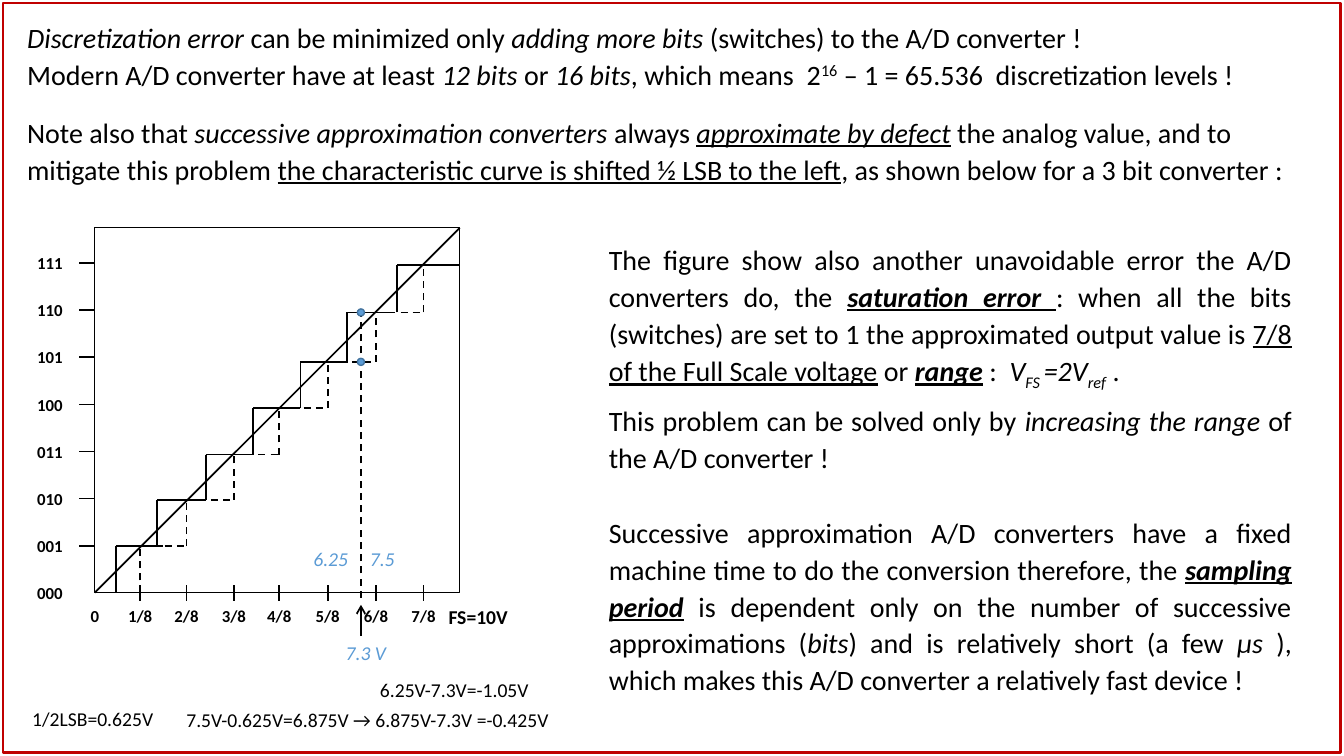
"""Build a slide on A/D converter errors with a shifted 3 bit characteristic."""
from pptx import Presentation
from pptx.dml.color import RGBColor
from pptx.enum.dml import MSO_LINE
from pptx.enum.shapes import MSO_CONNECTOR, MSO_SHAPE
from pptx.enum.text import MSO_ANCHOR, PP_ALIGN
from pptx.oxml.ns import qn
from pptx.util import Inches, Pt
from lxml import etree

DASH = MSO_LINE.DASH
STRAIGHT = MSO_CONNECTOR.STRAIGHT
RECTANGLE, OVAL = MSO_SHAPE.RECTANGLE, MSO_SHAPE.OVAL
LEFT, CENTER, JUSTIFY = PP_ALIGN.LEFT, PP_ALIGN.CENTER, PP_ALIGN.JUSTIFY
TOP, MIDDLE = MSO_ANCHOR.TOP, MSO_ANCHOR.MIDDLE

FONT = "Calibri"
BLACK, RED, BLUE, DARK_BLUE = "000000", "C00000", "5B9BD5", "43739E"
BASELINES = {"^": "30000", "_": "-25000"}

# Each paragraph: space before, space after, runs of (text, style letters)
INTRO = [
    (0, 0, [("Discretization error", "i"), (" can be minimized only ", ""),
            ("adding more bits ", "i"), ("(switches) to the A/D converter !", "")]),
    (0, 0, [("Modern A/D converter have at least ", ""), ("12 bits", "i"), (" or ", ""),
            ("16 bits", "i"), (", which means  2", ""), ("16", "^"),
            (" – 1 = 65.536  discretization levels !", "")]),
    (15, 0, [("Note also that ", ""), ("successive approximation converters", "i"),
             (" always ", ""), ("approximate by defect", "iu"),
             (" the analog value, and to mitigate this problem ", ""),
             ("the characteristic curve is shifted ½ LSB to the left", "u"),
             (", as shown below for a 3 bit converter :", "")]),
]
EXPLANATION = [
    (0, 6, [("The figure show also another unavoidable error the A/D converters do, the ", ""),
            ("saturation error ", "biu"),
            (": when all the bits (switches) are set to 1 the approximated output value is ", ""),
            ("7/8 of the Full Scale voltage", "u"), (" or ", ""), ("range", "biu"),
            (" :  ", ""), ("V", "i"), ("FS ", "i_"), ("=2V", "i"), ("ref", "i_"), (" .", "")]),
    (0, 0, [("This problem can be solved only by ", ""), ("increasing the range ", "i"),
            ("of the A/D converter !", "")]),
    (27, 0, [("Successive approximation A/D converters have a fixed machine time to do the "
              "conversion therefore, the ", ""), ("sampling period", "biu"),
             (" is dependent only on the number of successive approximations (", ""),
             ("bits", "i"), (") and is relatively short (a few ", ""), ("μs ", "i"),
             ("), which makes this A/D converter a relatively fast device !", "")]),
]

# Each note: text, left, top, width, colour, style letters
NOTES = [
    ("1/2LSB=0.625V", 0.22, 6.96, 1.42, BLACK, ""),
    ("7.5V-0.625V=6.875V → 6.875V-7.3V =-0.425V", 1.75, 6.97, 3.87, BLACK, ""),
    ("6.25V-7.3V=-1.05V", 3.67, 6.68, 1.79, BLACK, ""),
    ("6.25", 3.01, 5.38, 0.6, BLUE, "i"),
    ("7.5", 3.57, 5.38, 0.5, BLUE, "i"),
    ("7.3 V", 3.33, 6.31, 0.61, BLUE, "i"),
    ("FS=10V", 4.35, 5.95, 0.79, BLACK, "b"),
]

PLOT_LEFT, PLOT_TOP, PLOT_SIZE = 0.94, 2.26, 3.62
PLOT_RIGHT, PLOT_BOTTOM = PLOT_LEFT + PLOT_SIZE, PLOT_TOP + PLOT_SIZE
LEVELS = [5.42, 4.96, 4.51, 4.05, 3.59, 3.1, 2.63]
SHIFTED_STEPS = [1.15, 1.56, 2.04, 2.51, 2.98, 3.44, 3.94]
IDEAL_STEPS = [1.39, 1.85, 2.32, 2.77, 3.25, 3.73, 4.2]
TREAD, CODE_PITCH = 0.47, 0.467
INPUT_X, DOT = 3.58, 0.07


def color(value):
    return RGBColor.from_string(value)


def add_text(slide, box, paragraphs, size, font_color=BLACK, align=LEFT,
             spacing=1.0, wrap=True, anchor=TOP):
    shape = slide.shapes.add_textbox(*map(Inches, box))
    frame = shape.text_frame
    frame.word_wrap = wrap
    frame.vertical_anchor = anchor
    for index, (before, after, runs) in enumerate(paragraphs):
        paragraph = frame.paragraphs[0] if index == 0 else frame.add_paragraph()
        paragraph.alignment = align
        paragraph.line_spacing = spacing
        paragraph.space_before, paragraph.space_after = Pt(before), Pt(after)
        paragraph.font.name, paragraph.font.size = FONT, Pt(size)
        paragraph.font.color.rgb = color(font_color)
        for text, style in runs:
            run = paragraph.add_run()
            run.text = text
            run.font.bold = "b" in style
            run.font.italic = "i" in style
            run.font.underline = "u" in style
            for mark, baseline in BASELINES.items():
                if mark in style:
                    run._r.get_or_add_rPr().set("baseline", baseline)
    return shape


def add_line(slide, x1, y1, x2, y2, dash=None, arrow=False):
    line = slide.shapes.add_connector(STRAIGHT, *map(Inches, (x1, y1, x2, y2)))
    line.line.color.rgb = color(BLACK)
    line.line.width = Pt(1.25)
    if dash:
        line.line.dash_style = dash
    if arrow:
        etree.SubElement(line.line._get_or_add_ln(), qn("a:tailEnd"), type="arrow")
    etree.SubElement(line._element.spPr, qn("a:effectLst"))


def add_outline(slide, kind, box, line_color, width, fill=None):
    shape = slide.shapes.add_shape(kind, *map(Inches, box))
    shape.shadow.inherit = False
    if fill:
        shape.fill.solid()
        shape.fill.fore_color.rgb = color(fill)
    else:
        shape.fill.background()
    shape.line.color.rgb = color(line_color)
    shape.line.width = Pt(width)


def add_staircase(slide, steps, last_end, dash=None):
    below = PLOT_BOTTOM
    for x, level in zip(steps, LEVELS):
        add_line(slide, x, below, x, level, dash)
        end = last_end if x == steps[-1] else x + TREAD
        if end > x:
            add_line(slide, x, level, end, level, dash)
        below = level


def add_axes(slide):
    for number, x in enumerate([PLOT_LEFT] + IDEAL_STEPS):
        label = f"{number}/8" if number else "0"
        add_text(slide, (x - 0.3, 5.96, 0.6, 0.3), [(0, 0, [(label, "b")])], 12, align=CENTER)
        if number:
            add_line(slide, x, 5.96, x, 5.8)
    for number in range(8):
        y = PLOT_BOTTOM - number * CODE_PITCH
        add_text(slide, (0.27, y - 0.15, 0.53, 0.3), [(0, 0, [(f"{number:03b}", "b")])],
                 12, anchor=MIDDLE)
        if number:
            add_line(slide, PLOT_LEFT, y, 0.78, y)


def main():
    presentation = Presentation()
    presentation.slide_width, presentation.slide_height = Inches(13.33), Inches(7.5)
    slide = presentation.slides.add_slide(presentation.slide_layouts[6])

    add_text(slide, (0.17, 0.12, 13.01, 1.84), INTRO, 20, spacing=1.1)
    add_text(slide, (5.94, 2.32, 6.97, 4.63), EXPLANATION, 20, align=JUSTIFY, spacing=1.1)
    add_outline(slide, RECTANGLE, (0.03, 0.03, 13.27, 7.44), RED, 2)

    add_outline(slide, RECTANGLE, (PLOT_LEFT, PLOT_TOP, PLOT_SIZE, PLOT_SIZE), BLACK, 1)
    add_line(slide, PLOT_LEFT, PLOT_BOTTOM, PLOT_RIGHT, PLOT_TOP)
    add_staircase(slide, SHIFTED_STEPS, PLOT_RIGHT)
    add_staircase(slide, IDEAL_STEPS, IDEAL_STEPS[-1], DASH)
    add_axes(slide)

    add_line(slide, INPUT_X, 5.93, INPUT_X, LEVELS[5], DASH)
    add_line(slide, INPUT_X, 6.31, INPUT_X, 6, arrow=True)
    for level in LEVELS[4:6]:
        add_outline(slide, OVAL, (INPUT_X - DOT / 2, level - DOT / 2, DOT, DOT),
                    DARK_BLUE, 1, BLUE)
    for text, left, top, width, note_color, style in NOTES:
        add_text(slide, (left, top, width, 0.34), [(0, 0, [(text, style)])], 14,
                 note_color, wrap=False)
    presentation.save("out.pptx")


if __name__ == "__main__":
    main()
